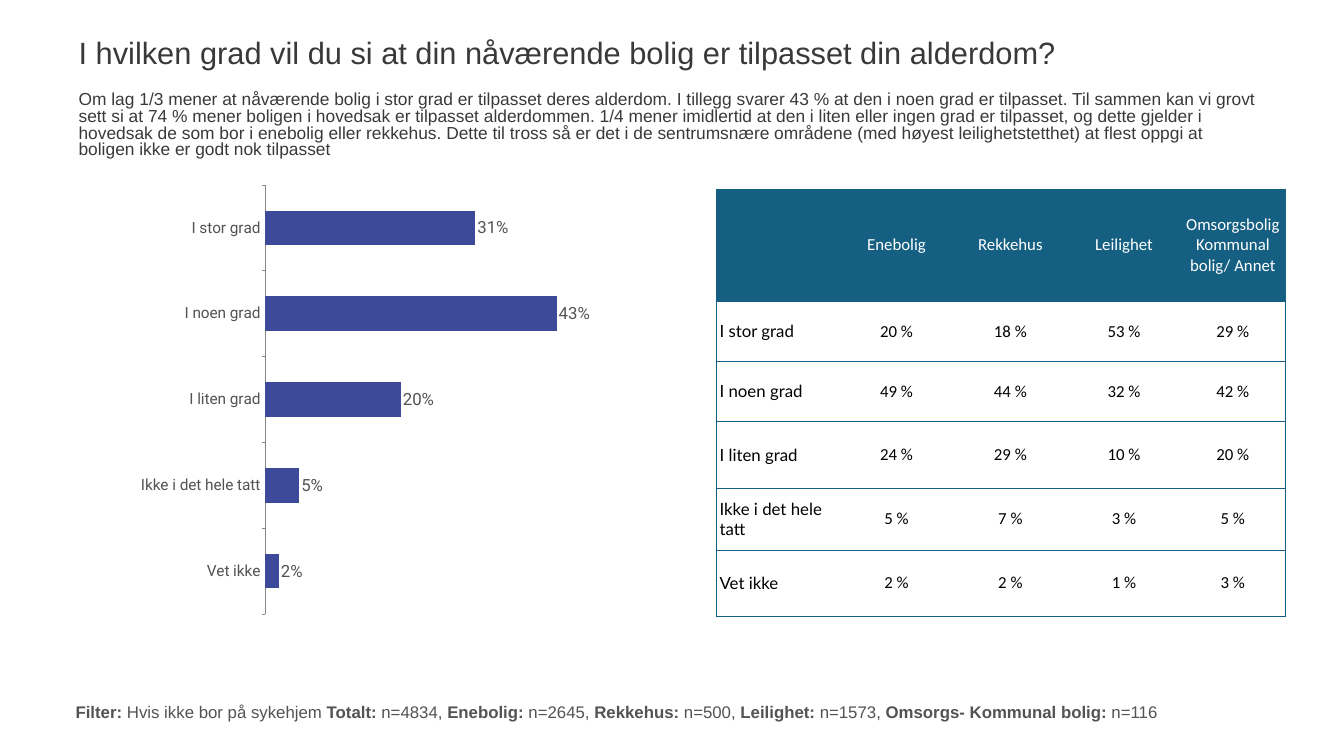
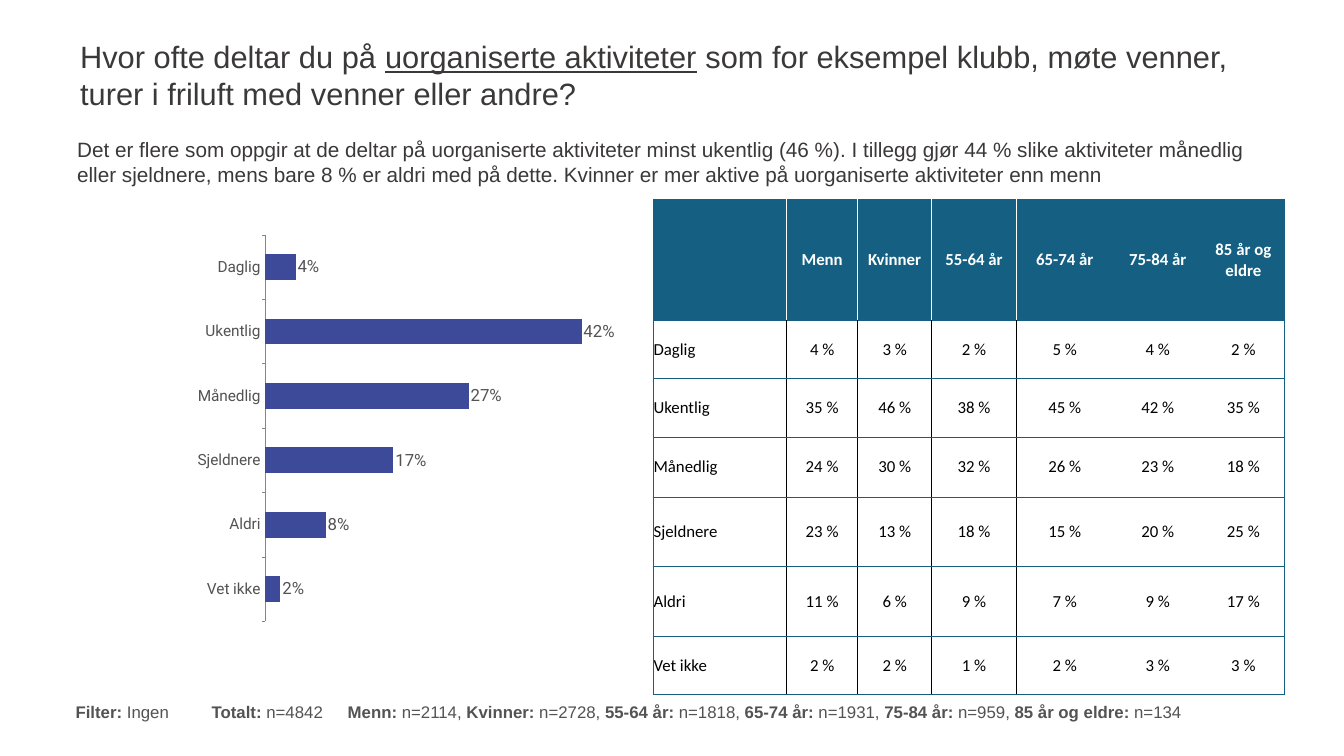
"""Build two survey slides, each with a bar chart, a breakdown table and a filter line."""
from lxml import etree
from pptx import Presentation
from pptx.chart.data import CategoryChartData
from pptx.dml.color import RGBColor
from pptx.enum.chart import XL_CHART_TYPE, XL_LABEL_POSITION, XL_TICK_LABEL_POSITION, XL_TICK_MARK
from pptx.enum.text import MSO_ANCHOR, MSO_AUTO_SIZE, PP_ALIGN
from pptx.oxml import parse_xml
from pptx.oxml.ns import nsdecls, qn
from pptx.util import Inches, Pt

TITLE_COLOR, NOTE_COLOR, BAR_COLOR = "3B3838", "535353", "3D4A9A"
TEAL, WHITE, BLACK = "156082", "FFFFFF", "000000"
NO_GRID_STYLE = "{2D5ABB26-0587-4C30-8999-92F81FD0307C}"
BOX_MARGINS = (0.06, 0.06, 0.06, 0.06)
TEXT_WIDTH = 23.66

SLIDES = [
    {
        "title": [("I hvilken grad vil du si at din nåværende bolig er tilpasset din alderdom?", "")],
        "title_area": (1.5, 0.3, TEXT_WIDTH, 1.47),
        "lead": "Om lag 1/3 mener at nåværende bolig i stor grad er tilpasset deres alderdom. "
                "I tillegg svarer 43 % at den i noen grad er tilpasset. Til sammen kan vi grovt sett si at "
                "74 % mener boligen i hovedsak er tilpasset alderdommen. 1/4 mener imidlertid at den i liten "
                "eller ingen grad er tilpasset, og dette gjelder i hovedsak de som bor i enebolig eller "
                "rekkehus. Dette til tross så er det i de sentrumsnære områdene (med høyest "
                "leilighetstetthet) at flest oppgi at boligen ikke er godt nok tilpasset",
        "lead_area": (1.5, 1.72, TEXT_WIDTH, 1.55),
        "lead_size": 24.8,
        "lead_spacing": 0.8,
        "chart_area": (1.53, 2.89, 11.43, 10.8),
        "axis_max": 0.5,
        "shares": [0.31, 0.43, 0.2, 0.05, 0.02],
        "table_area": (14.21, 3.75, 11.29, 8.47),
        "columns": [2.45, 2.26, 2.26, 2.25, 2.07],
        "rows": [2.23, 1.19, 1.19, 1.32, 1.23, 1.32],
        "margins": (0.07, 0, 0.07, 0),
        "label_font": "Lato",
        "bold_header": "",
        "dividers": [],
        "header": ["Enebolig", "Rekkehus", "Leilighet", "Omsorgsbolig\nKommunal bolig/ Annet"],
        "answers": {
            "I stor grad": [20, 18, 53, 29],
            "I noen grad": [49, 44, 32, 42],
            "I liten grad": [24, 29, 10, 20],
            "Ikke i det hele tatt": [5, 7, 3, 5],
            "Vet ikke": [2, 2, 1, 3],
        },
        "filter": ["Filter: ", "Hvis ikke bor på sykehjem ", "Totalt: ", "n=4834, ", "Enebolig:", " n=2645, ",
                   "Rekkehus:", " n=500, ", "Leilighet:", " n=1573, ", "Omsorgs- Kommunal bolig:", " n=116"],
        "tabs": [],
    },
    {
        "title": [("Hvor ofte deltar du på ", ""), ("uorganiserte aktiviteter", "underline"),
                  (" som for eksempel klubb, møte venner, turer i friluft med venner eller andre?", "")],
        "title_area": (1.53, 0.47, TEXT_WIDTH, 2.04),
        "lead": "Det er flere som oppgir at de deltar på uorganiserte aktiviteter minst ukentlig (46 %). "
                "I tillegg gjør 44 % slike aktiviteter månedlig eller sjeldnere, mens bare 8 % er aldri med "
                "på dette. Kvinner er mer aktive på uorganiserte aktiviteter enn menn",
        "lead_area": (1.47, 2.43, TEXT_WIDTH, 1.55),
        "lead_size": 29.6,
        "lead_spacing": 1.0,
        "chart_area": (1.53, 3.96, 11.43, 9.72),
        "axis_max": 0.45,
        "shares": [0.04, 0.42, 0.27, 0.17, 0.08, 0.02],
        "table_area": (12.96, 3.96, 12.54, 9.81),
        "columns": [2.65, 1.41, 1.47, 1.68, 1.92, 1.77, 1.63],
        "rows": [2.39, 1.16, 1.16, 1.19, 1.38, 1.38, 1.16],
        "margins": (0.01, 0.01, 0.01, 0),
        "label_font": "Calibri",
        "bold_header": "bold",
        "dividers": [0, 2],
        "header": ["Menn", "Kvinner", "55-64 år", "65-74 år", "75-84 år", "85 år og eldre"],
        "answers": {
            "Daglig": [4, 3, 2, 5, 4, 2],
            "Ukentlig": [35, 46, 38, 45, 42, 35],
            "Månedlig": [24, 30, 32, 26, 23, 18],
            "Sjeldnere": [23, 13, 18, 15, 20, 25],
            "Aldri": [11, 6, 9, 7, 9, 17],
            "Vet ikke": [2, 2, 1, 2, 3, 3],
        },
        "filter": ["Filter: ", "Ingen \t", "Totalt:", " n=4842 \t", "Menn: ", "n=2114, ", "Kvinner:", " n=2728, ",
                   "55-64 år:", " n=1818, ", "65-74 år:", " n=1931, ", "75-84 år:", " n=959, ",
                   "85 år og eldre:", " n=134"],
        "tabs": [2.7, 5.4],
    },
]


def rgb(color):
    return RGBColor.from_string(color)


def write_text(holder, parts, size=24, color=BLACK, font="Arial", align=PP_ALIGN.LEFT,
               spacing=1.0, margins=BOX_MARGINS, tabs=()):
    """Fill a text frame or table cell with (text, style) parts."""
    holder.margin_left, holder.margin_top, holder.margin_right, holder.margin_bottom = map(Inches, margins)
    holder.vertical_anchor = MSO_ANCHOR.MIDDLE
    paragraph = getattr(holder, "text_frame", holder).paragraphs[0]
    paragraph.alignment, paragraph.line_spacing = align, spacing
    if tabs:
        tab_list = etree.SubElement(paragraph._p.get_or_add_pPr(), qn("a:tabLst"))
        for position in tabs:
            etree.SubElement(tab_list, qn("a:tab"), pos=str(Inches(position)), algn="l")
    for text, style in parts:
        for index, line in enumerate(text.split("\n")):
            if index:
                paragraph.add_line_break()
            run = paragraph.add_run()
            run.text = line
            run.font.name, run.font.size = font, Pt(size)
            run.font.color.rgb = rgb(color)
            if style:
                setattr(run.font, style, True)


presentation = Presentation()
presentation.slide_width, presentation.slide_height = Inches(26.67), Inches(15)

for survey in SLIDES:
    slide = presentation.slides.add_slide(presentation.slide_layouts[5])
    title = slide.shapes.title
    title.left, title.top, title.width, title.height = map(Inches, survey["title_area"])
    title.text_frame.auto_size = MSO_AUTO_SIZE.NONE
    write_text(title.text_frame, survey["title"], size=44, color=TITLE_COLOR)

    chart_data = CategoryChartData(number_format="0%")
    chart_data.categories = list(survey["answers"])
    chart_data.add_series("Series 1", survey["shares"])
    chart = slide.shapes.add_chart(
        XL_CHART_TYPE.BAR_CLUSTERED, *map(Inches, survey["chart_area"]), chart_data).chart
    chart.has_title = chart.has_legend = False
    chart.font.name, chart.font.size = "Arial", Pt(10)
    chart.font.color.rgb = rgb(BLACK)

    answer_axis, share_axis = chart.category_axis, chart.value_axis
    answer_axis.reverse_order = True
    answer_axis.has_major_gridlines = share_axis.has_major_gridlines = False
    answer_axis.major_tick_mark = XL_TICK_MARK.OUTSIDE
    answer_axis.tick_label_position = XL_TICK_LABEL_POSITION.LOW
    answer_axis.format.line.color.rgb = rgb("868686")
    answer_axis.format.line.width = Pt(0.75)
    share_axis.minimum_scale, share_axis.maximum_scale = 0, survey["axis_max"]
    share_axis.visible = False

    plot = chart.plots[0]
    plot.gap_width, plot.overlap, plot.vary_by_categories = 150, -20, False
    bars = plot.series[0]
    bars.format.fill.solid()
    bars.format.fill.fore_color.rgb = rgb(BAR_COLOR)
    plot.has_data_labels = True
    labels = plot.data_labels
    labels.show_value = True
    labels.position = XL_LABEL_POSITION.OUTSIDE_END
    labels.number_format, labels.number_format_is_linked = "0%", False
    for font, size in ((answer_axis.tick_labels.font, 22), (labels.font, 24)):
        font.name, font.size = "Roboto", Pt(size)
        font.color.rgb = rgb(NOTE_COLOR)

    plot_area = chart._chartSpace.chart.plotArea
    for automatic_layout in plot_area.findall(qn("c:layout")):
        plot_area.remove(automatic_layout)
    plot_area.insert(0, parse_xml(
        f'<c:layout {nsdecls("c")}><c:manualLayout><c:layoutTarget val="inner"/>'
        '<c:xMode val="edge"/><c:yMode val="edge"/><c:x val="0.327"/><c:y val="0.072"/>'
        '<c:w val="0.588"/><c:h val="0.789"/></c:manualLayout></c:layout>'))

    column_count, row_count = len(survey["columns"]), len(survey["rows"])
    table_frame = slide.shapes.add_table(row_count, column_count, *map(Inches, survey["table_area"]))
    table = table_frame.table
    table.first_row = table.horz_banding = False
    for style_id in table_frame._element.iter(qn("a:tableStyleId")):
        style_id.text = NO_GRID_STYLE
    for column, width in zip(table.columns, survey["columns"]):
        column.width = Inches(width)
    for row, height in zip(table.rows, survey["rows"]):
        row.height = Inches(height)

    table_texts = [["", *survey["header"]]]
    table_texts += [[answer, *(f"{share} %" for share in shares)] for answer, shares in survey["answers"].items()]
    for row_index, row_texts in enumerate(table_texts):
        is_header = row_index == 0
        divider_color = WHITE if is_header else BLACK
        for column_index, text in enumerate(row_texts):
            is_label = column_index == 0
            cell = table.cell(row_index, column_index)
            write_text(cell, [(text, survey["bold_header"] if is_header else "")] if text else [],
                       color=WHITE if is_header else BLACK,
                       font=survey["label_font"] if is_label else "Calibri",
                       align=PP_ALIGN.LEFT if is_label else PP_ALIGN.CENTER,
                       margins=survey["margins"])
            borders = {}
            if is_label:
                borders["L"] = TEAL
            elif column_index - 1 in survey["dividers"]:
                borders["L"] = divider_color
            if column_index == column_count - 1:
                borders["R"] = TEAL
            elif column_index in survey["dividers"]:
                borders["R"] = divider_color
            borders.update(T=TEAL, B=TEAL)
            for side, color in borders.items():
                line = etree.SubElement(cell._tc.get_or_add_tcPr(), qn(f"a:ln{side}"), w=str(Pt(1)))
                fill = etree.SubElement(line, qn("a:solidFill"))
                etree.SubElement(fill, qn("a:srgbClr"), val=color)
            if is_header or is_label:
                cell.fill.solid()
                cell.fill.fore_color.rgb = rgb(TEAL if is_header else WHITE)
            else:
                cell.fill.background()

    lead = slide.shapes.add_textbox(*map(Inches, survey["lead_area"])).text_frame
    lead.word_wrap = True
    write_text(lead, [(survey["lead"], "")], size=survey["lead_size"], color=TITLE_COLOR,
               spacing=survey["lead_spacing"])

    filter_line = slide.shapes.add_textbox(*map(Inches, (1.44, 13.65, TEXT_WIDTH, 0.93))).text_frame
    filter_line.word_wrap = True
    filter_parts = [(text, "" if index % 2 else "bold") for index, text in enumerate(survey["filter"])]
    write_text(filter_line, filter_parts, color=NOTE_COLOR, tabs=survey["tabs"])

presentation.save("out.pptx")
